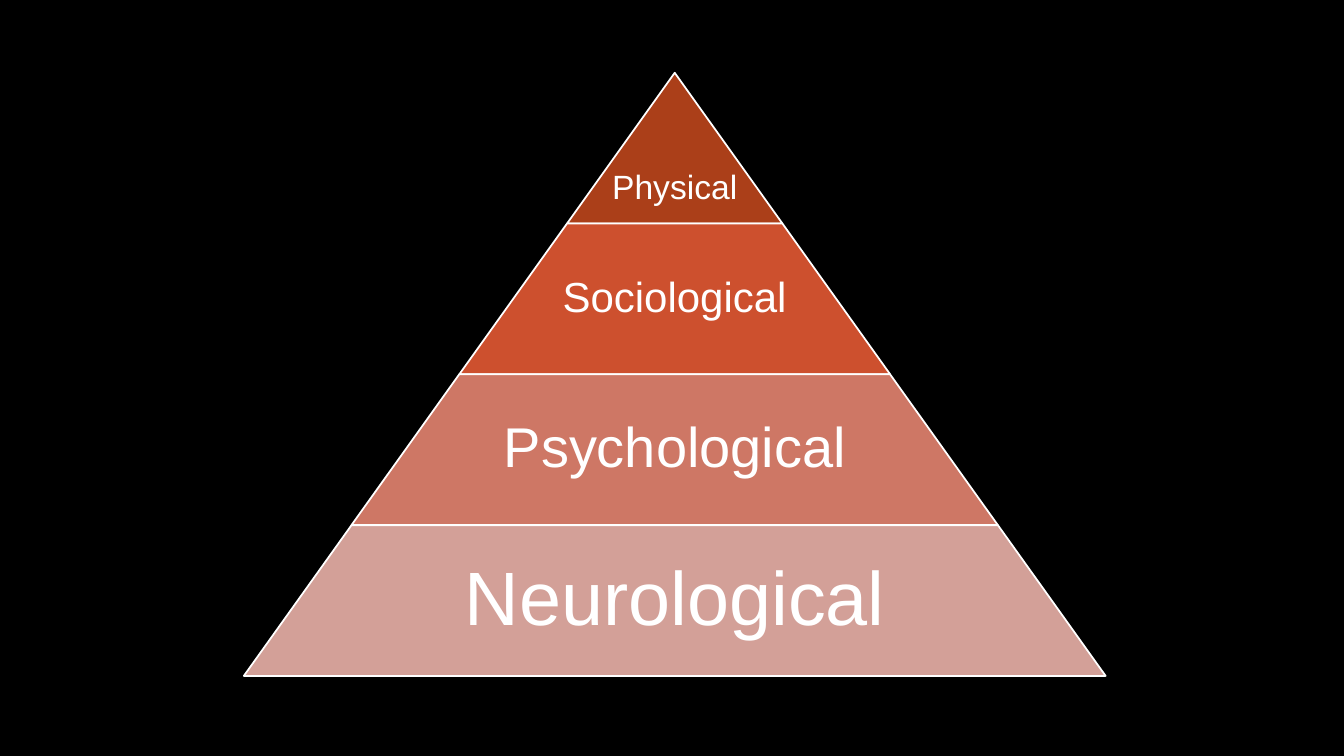
from pptx import Presentation
from pptx import util as u
from pptx.dml.color import RGBColor
from pptx.enum import shapes, text

COLORS = {
    "background": "000000",
    "white": "FFFFFF",
    "Physical": "AB3F19",
    "Sociological": "CD502E",
    "Psychological": "CE7765",
    "Neurological": "D3A098",
}
LEVELS = [
    ("Physical", 24, 1, 3.6, 58),
    ("Sociological", 30, 0.65, 2.9, 0),
    ("Psychological", 40, 0.65, 4.3, 0),
    ("Neurological", 54, 0.65, 5, 0),
]
CENTER, TOP, WIDTH_STEP, BAND_HEIGHT = 481.95, 52, 153.9, 107.7


class PyramidSlide:
    font = "Arial"
    outline = 1.25

    def __init__(self, deck):
        self.page = deck.slides.add_slide(deck.slide_layouts[6])
        fill = self.page.background.fill
        fill.solid()
        fill.fore_color.rgb = self.color("background")
        self.pyramid = self.page.shapes.add_group_shape()

    def color(self, name):
        return RGBColor.from_string(COLORS[name])

    def frame(self, top, width):
        return [u.Pt(n) for n in (CENTER - width / 2, top, width, BAND_HEIGHT)]

    def band(self, name, top, width):
        band = self.pyramid.shapes.add_shape(
            shapes.MSO_SHAPE.TRAPEZOID, *self.frame(top, width))
        band.adjustments[0] = WIDTH_STEP / 2 / BAND_HEIGHT
        band.shadow.inherit = False
        band.fill.solid()
        band.fill.fore_color.rgb = self.color(name)
        band.line.color.rgb = self.color("white")
        band.line.width = u.Pt(self.outline)

    def label(self, words, size, top, width, inset, drop):
        box = self.pyramid.shapes.add_textbox(*self.frame(top, width))
        frame = box.text_frame
        frame.word_wrap = True
        frame.vertical_anchor = text.MSO_ANCHOR.MIDDLE
        frame.margin_left = frame.margin_right = frame.margin_bottom = u.Pt(inset)
        frame.margin_top = u.Pt(inset + drop)
        para = frame.paragraphs[0]
        para.text = words
        para.alignment = text.PP_ALIGN.CENTER
        para.line_spacing = 0.9
        para.font.name = self.font
        para.font.size = u.Pt(size)
        para.font.color.rgb = self.color("white")


def main():
    deck = Presentation()
    deck.slide_width, deck.slide_height = u.Pt(960), u.Pt(540)
    slide = PyramidSlide(deck)
    for level, (name, size, share, inset, drop) in enumerate(LEVELS):
        top = TOP + level * BAND_HEIGHT
        width = (level + 1) * WIDTH_STEP
        slide.band(name, top, width)
        slide.label(name, size, top, width * share, inset, drop)
    deck.save("out.pptx")


if __name__ == "__main__":
    main()
